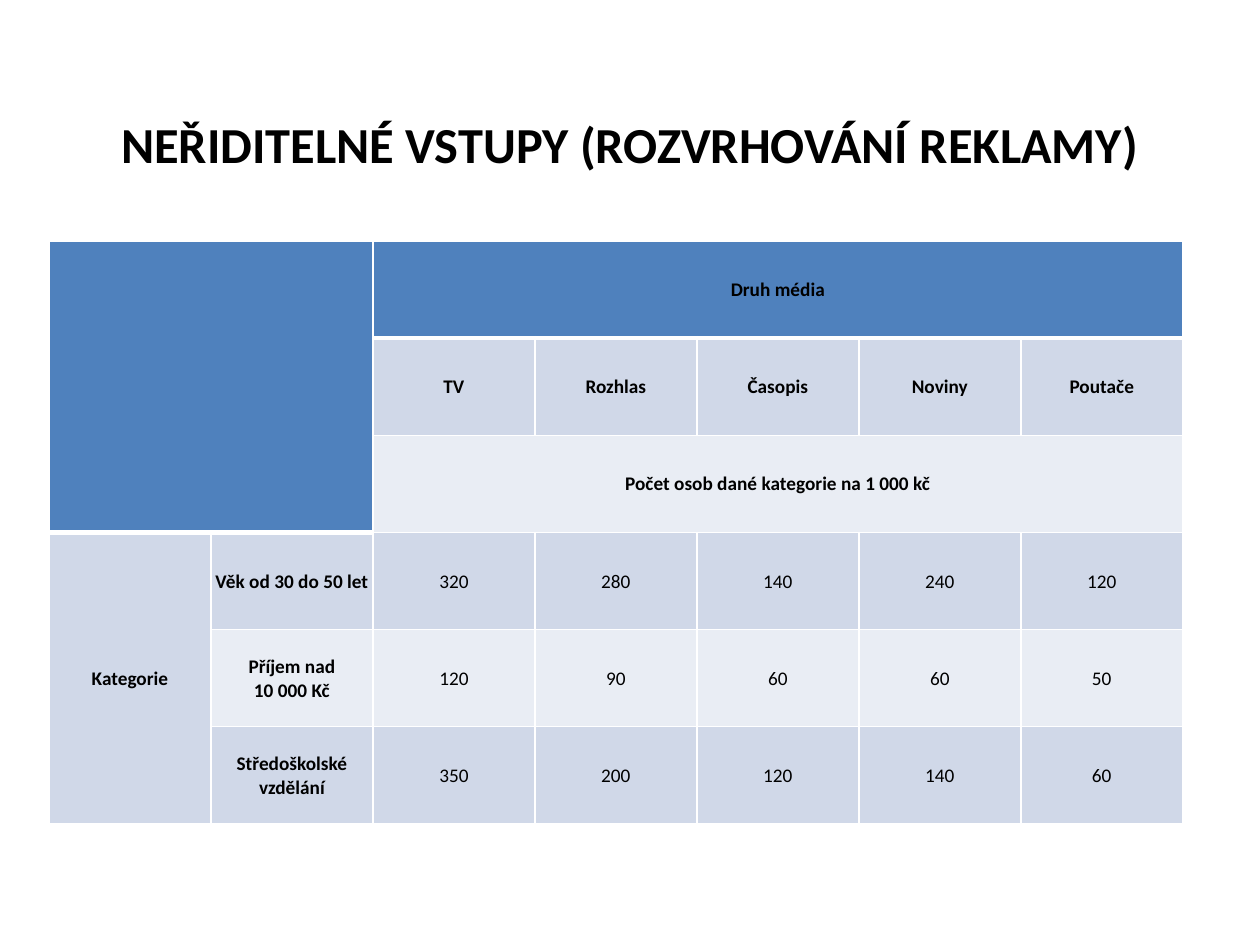
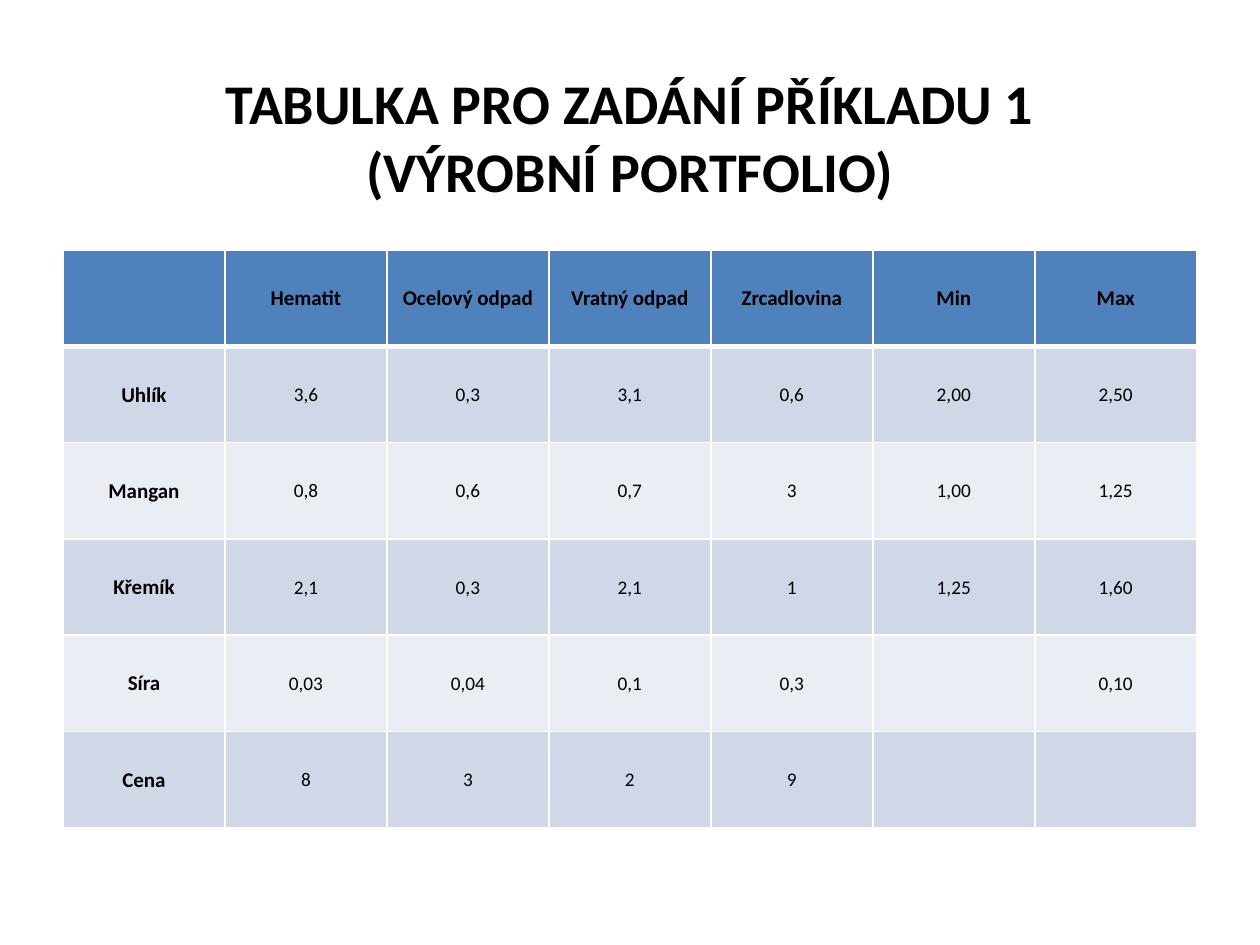
"""Builds two table slides: advertising inputs and the production portfolio."""
import dataclasses

import lxml.etree
import pptx
import pptx.dml.color
import pptx.enum.text
import pptx.oxml.ns
import pptx.util

EMU_PER_PX = 914400 / 126


def px(length):
    return pptx.util.Emu(round(length * EMU_PER_PX))


@dataclasses.dataclass(frozen=True)
class Theme:
    font: str = "Calibri"
    ink: str = "000000"
    header: str = "4F81BD"
    odd_band: str = "D0D8E8"
    even_band: str = "E9EDF4"
    rule: str = "FFFFFF"
    thin: int = 1
    thick: int = 3
    value_size: int = 11


def write(frame, text, *, theme, size, bold=False):
    frame.word_wrap = True
    paragraph = frame.paragraphs[0]
    paragraph.text = text
    paragraph.alignment = pptx.enum.text.PP_ALIGN.CENTER
    for run in paragraph.runs:
        run.font.name = theme.font
        run.font.size = pptx.util.Pt(size)
        run.font.bold = bold
        run.font.color.rgb = pptx.dml.color.RGBColor.from_string(theme.ink)


class Deck:
    def __init__(self, theme):
        self.theme = theme
        self.presentation = pptx.Presentation()
        self.presentation.slide_width = px(1260)
        self.presentation.slide_height = px(945)
        self.slide = None

    def add_slide(self):
        blank = self.presentation.slide_layouts[6]
        self.slide = self.presentation.slides.add_slide(blank)

    def title(self, text, top, height, size):
        frame = self.slide.shapes.add_textbox(px(63), px(top), px(1134), px(height)).text_frame
        frame.vertical_anchor = pptx.enum.text.MSO_ANCHOR.MIDDLE
        write(frame, text, theme=self.theme, size=size, bold=True)

    def borders(self, cell, **widths):
        properties = cell._tc.get_or_add_tcPr()
        for side in "LRTB":
            width = pptx.util.Pt(widths.get(side, self.theme.thin))
            line = lxml.etree.SubElement(properties, pptx.oxml.ns.qn(f"a:ln{side}"), w=str(width))
            fill = lxml.etree.SubElement(line, pptx.oxml.ns.qn("a:solidFill"))
            lxml.etree.SubElement(fill, pptx.oxml.ns.qn("a:srgbClr"), val=self.theme.rule)

    def table(self, rows, left, top, height, header_depths, first_value, label_size, spans=()):
        theme = self.theme
        grid = self.slide.shapes.add_table(
            len(rows), len(rows[0]), px(left), px(top), px(1134), px(height)).table
        for row, column, last_row, last_column in spans:
            grid.cell(row, column).merge(grid.cell(last_row, last_column))
        for r, texts in enumerate(rows):
            for c, text in enumerate(texts):
                cell = grid.cell(r, c)
                depth = header_depths[c]
                closes_header = r + cell.span_height == depth
                self.borders(cell,
                             T=theme.thick if r == depth else theme.thin,
                             B=theme.thick if closes_header else theme.thin)
                band = theme.odd_band if r % 2 else theme.even_band
                cell.fill.solid()
                cell.fill.fore_color.rgb = pptx.dml.color.RGBColor.from_string(
                    theme.header if r < depth else band)
                cell.vertical_anchor = pptx.enum.text.MSO_ANCHOR.MIDDLE
                cell.margin_left = cell.margin_right = cell.margin_top = px(1)
                cell.margin_bottom = 0
                if text:
                    is_value = r >= first_value[0] and c >= first_value[1]
                    write(cell.text_frame, text, theme=theme, bold=not is_value,
                          size=theme.value_size if is_value else label_size)


MEDIA_REACH = [
    ["", "", "Druh média", "", "", "", ""],
    ["", "", "TV", "Rozhlas", "Časopis", "Noviny", "Poutače"],
    ["", "", "Počet osob dané kategorie na 1 000 kč", "", "", "", ""],
    ["Kategorie", "Věk od 30 do 50 let", "320", "280", "140", "240", "120"],
    ["", "Příjem nad\n10 000 Kč", "120", "90", "60", "60", "50"],
    ["", "Středoškolské vzdělání", "350", "200", "120", "140", "60"],
]

ALLOY_CONTENT = [
    ["", "Hematit", "Ocelový odpad", "Vratný odpad", "Zrcadlovina", "Min", "Max"],
    ["Uhlík", "3,6", "0,3", "3,1", "0,6", "2,00", "2,50"],
    ["Mangan", "0,8", "0,6", "0,7", "3", "1,00", "1,25"],
    ["Křemík", "2,1", "0,3", "2,1", "1", "1,25", "1,60"],
    ["Síra", "0,03", "0,04", "0,1", "0,3", "", "0,10"],
    ["Cena", "8", "3", "2", "9", "", ""],
]


def main():
    deck = Deck(Theme())

    deck.add_slide()
    deck.title("NEŘIDITELNÉ VSTUPY (ROZVRHOVÁNÍ REKLAMY)", top=92, height=103, size=28.8)
    deck.table(MEDIA_REACH, left=49, top=241, height=583,
               header_depths=[3] * 2 + [1] * 5, first_value=(3, 2), label_size=11,
               spans=[(0, 0, 2, 1), (0, 2, 0, 6), (2, 2, 2, 6), (3, 0, 5, 0)])

    deck.add_slide()
    deck.title("TABULKA PRO ZADÁNÍ PŘÍKLADU 1\n(VÝROBNÍ PORTFOLIO)", top=77, height=118, size=32)
    deck.table(ALLOY_CONTENT, left=63, top=250, height=578,
               header_depths=[1] * 7, first_value=(1, 1), label_size=12)

    deck.presentation.save("out.pptx")


if __name__ == "__main__":
    main()
